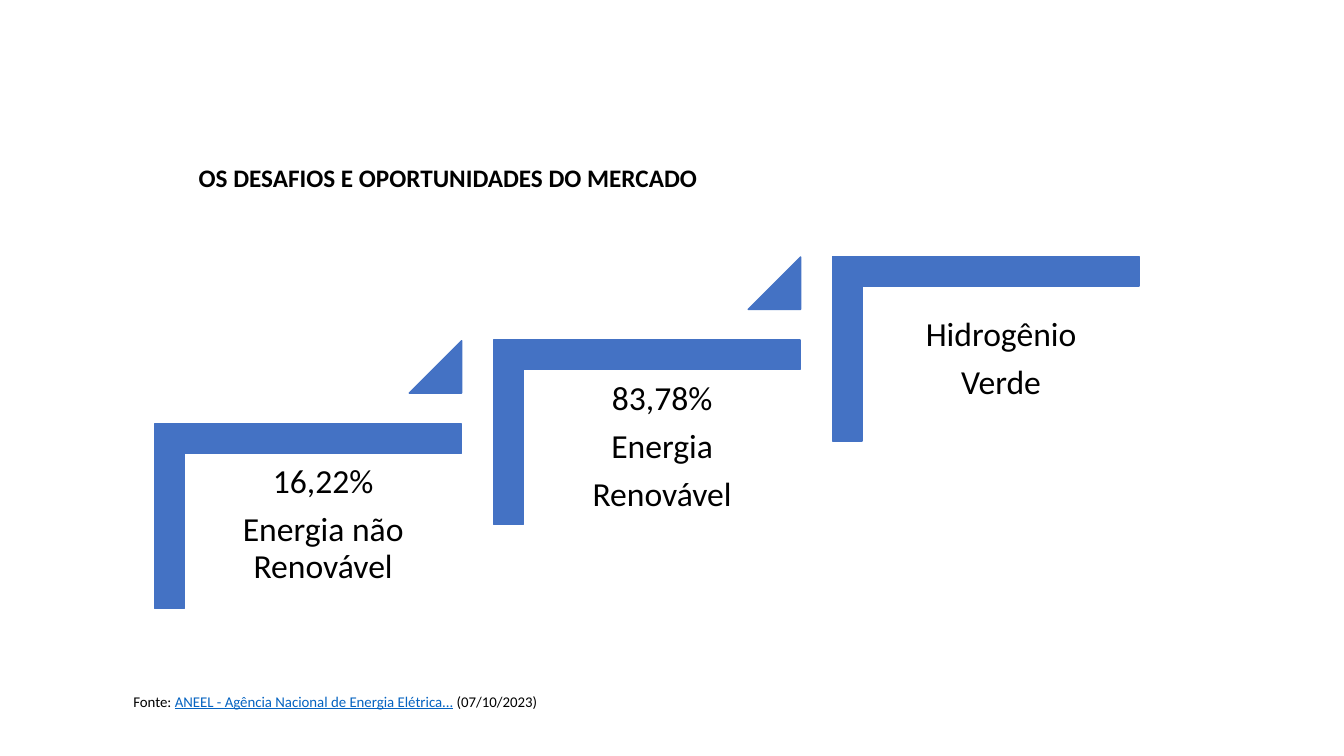
from pptx import Presentation
from pptx import util as u
from pptx.dml.color import RGBColor
from pptx.enum import shapes, text

BLUE, BLACK, LINK = "4472C4", "000000", "0563C1"


def paint(color_format, hex_color):
    color_format.rgb = RGBColor.from_string(hex_color)


def write(frame, paragraphs, size, bold=False, align="CENTER", anchor="TOP",
          line=None, after=0, inset=(0.1, 0.05), top_inset=None):
    """Fill a frame; each paragraph is a list of (words, color, underline) runs."""
    frame.word_wrap = True
    frame.auto_size = text.MSO_AUTO_SIZE.NONE
    frame.vertical_anchor = text.MSO_ANCHOR[anchor]
    side, edge = map(u.Inches, inset)
    frame.margin_left = frame.margin_right = side
    frame.margin_bottom = edge
    frame.margin_top = edge if top_inset is None else u.Inches(top_inset)
    for index, runs in enumerate(paragraphs):
        paragraph = frame.add_paragraph() if index else frame.paragraphs[0]
        paragraph.alignment = text.PP_ALIGN[align]
        paragraph.line_spacing = line
        paragraph.space_before = u.Pt(0)
        paragraph.space_after = u.Pt(after)
        for words, color, underline in runs:
            run = paragraph.add_run()
            run.text = words
            run.font.name = "Calibri"
            run.font.size = u.Pt(size)
            run.font.bold = bold
            run.font.underline = underline
            paint(run.font.color, color)


class StairSlide:
    """Slide whose lengths are given in percent of its width and height."""

    def __init__(self, deck):
        self.deck = deck
        self.slide = deck.slides.add_slide(deck.slide_layouts[5])

    def box(self, left, top, width, height):
        across, down = self.deck.slide_width / 100, self.deck.slide_height / 100
        return [round(n) for n in (left * across, top * down, width * across, height * down)]

    def title(self, words, area, **style):
        heading = self.slide.shapes.title
        heading.left, heading.top, heading.width, heading.height = self.box(*area)
        write(heading.text_frame, [[(words, BLACK, False)]], **style)

    def label(self, paragraphs, area, **style):
        caption = self.slide.shapes.add_textbox(*self.box(*area))
        write(caption.text_frame, paragraphs, **style)

    def block(self, kind, area, adjustments, rotation=0):
        piece = self.slide.shapes.add_shape(kind, *self.box(*area))
        piece.rotation = rotation
        piece.shadow.inherit = False
        piece.fill.solid()
        paint(piece.fill.fore_color, BLUE)
        paint(piece.line.color, BLUE)
        piece.line.width = u.Pt(1)
        for index, value in enumerate(adjustments):
            piece.adjustments[index] = value


def main():
    deck = Presentation()
    deck.slide_width, deck.slide_height = u.Inches(13.33), u.Inches(7.5)
    stairs = StairSlide(deck)
    stairs.title("OS DESAFIOS E OPORTUNIDADES DO MERCADO", (14.03, 20.8, 39.68, 5.33),
                 size=18, bold=True, align="LEFT", after=6)

    steps = [
        (["16,22%", "Energia não Renovável"], 0.1, 0.1),
        (["83,78%", "Energia", "Renovável"], 0.1, 0.1),
        (["Hidrogênio", "Verde"], 0.05, 0.3),
    ]
    column, row = 25.22, 11.07
    for index, (lines, inset, top_inset) in enumerate(steps):
        right, up = index * column, index * row
        stairs.block(shapes.MSO_SHAPE.CORNER, (16.05 + right, 48 - up, 13.73, 40.53),
                     [0.16, 0.16], rotation=90)
        stairs.label([[(line, BLACK, False)] for line in lines],
                     (13.73 + right, 60.13 - up, 20.63, 32.13),
                     size=24, line=0.9, after=8.4, inset=(inset, inset), top_inset=top_inset)
        if index < len(steps) - 1:
            stairs.block(shapes.MSO_SHAPE.ISOSCELES_TRIANGLE,
                         (30.45 + right, 45.07 - up, 3.9, 6.93), [1])

    citation = [("Fonte: ", BLACK, False),
                ("ANEEL - Agência Nacional de Energia Elétrica...", LINK, True),
                (" (07/10/2023)", BLACK, False)]
    stairs.label([citation], (7.95, 91.2, 33.98, 3.33),
                 size=10.6, anchor="BOTTOM", line=0.7, after=5.5)
    deck.save("out.pptx")


if __name__ == "__main__":
    main()
